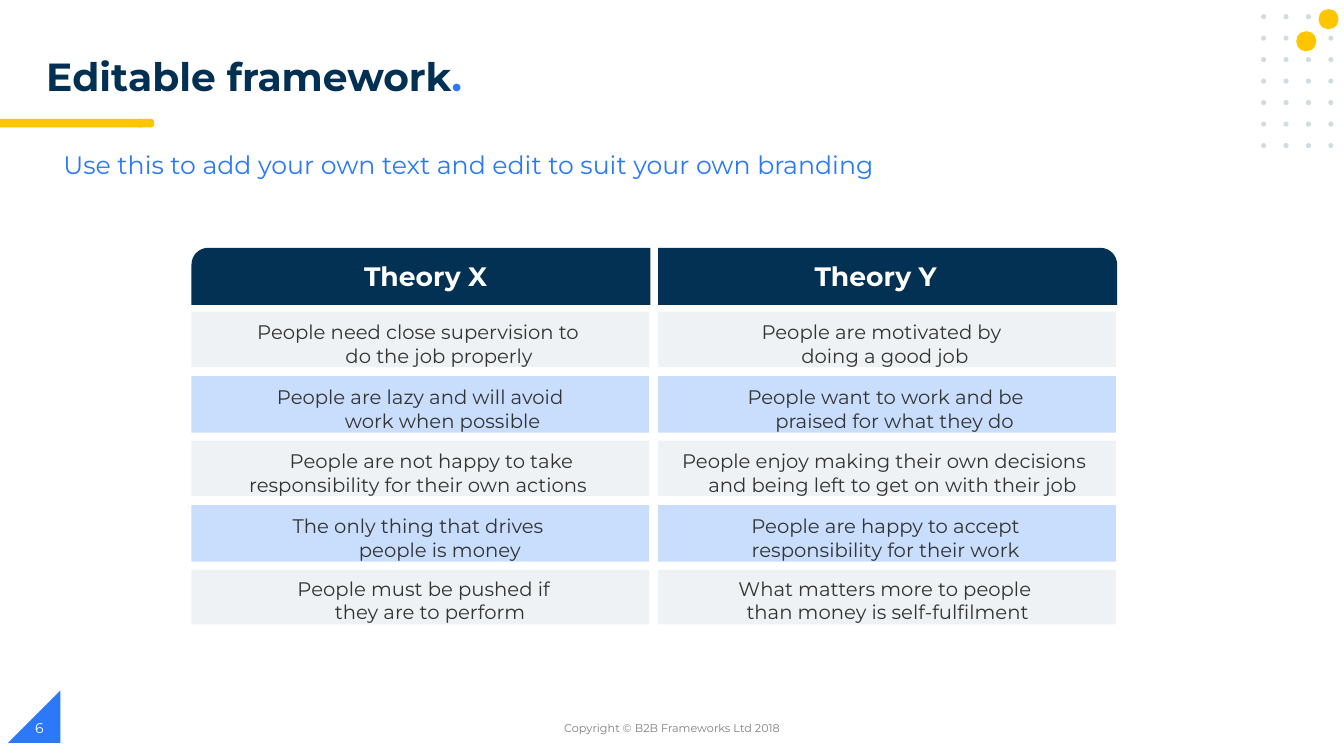
import math

from lxml import etree
from pptx import Presentation
from pptx.dml.color import RGBColor
from pptx.enum import shapes, text
from pptx.oxml.ns import qn
from pptx.util import Pt

COLORS = {
    "navy": "023053", "header": "023154", "blue": "2B79F8", "band": "2B7AF9",
    "yellow": "FFC600", "dot": "D1DBE0", "pale": "EEF2F4", "ink": "333333",
    "gray": "7F7F7F", "white": "FFFFFF",
}
FONT = "Montserrat"
SHAPE = shapes.MSO_SHAPE
CENTER = text.PP_ALIGN.CENTER
MIDDLE = text.MSO_ANCHOR.MIDDLE
BOX_INSETS = (7.2, 3.6, 7.2, 3.6)

# box (left, top, width, height), runs (text, size, color, bold), options
TEXTS = [
    ((25.9, 37.4, 406, 43.2),
     [("Editable framework", 28, "navy", True), (".", 28, "blue", True)],
     {"line_spacing": 0.9}),
    ((318.2, 505.4, 324, 28.8),
     [("Copyright © B2B Frameworks Ltd 2018", 8, "gray", False)],
     {"alignment": CENTER, "anchor": MIDDLE}),
    ((18, 505.4, 216, 28.8), [("6", 10, "white", False)], {"anchor": MIDDLE}),
    ((38.2, 103, 618.5, 34.6),
     [("Use this to add your own text and edit to suit your own branding",
       18, "blue", False)], {}),
]

# Each statement: text, (left margin, first-line indent, right margin)
THEORIES = [
    ("Theory X", 136.8, 259.2, [
        ("People need close supervision to do the job properly", (75, -30, 48)),
        ("People are lazy and will avoid work when possible", (82, -32, 50)),
        ("People are not happy to take responsibility for their own actions",
         (31, 19, 34)),
        ("The only thing that drives people is money", (92, -31, 64)),
        ("People must be pushed if they are to perform", (80, -9, 66)),
    ]),
    ("Theory Y", 470.2, 581, [
        ("People are motivated by doing a good job", (78, -5, 81)),
        ("People want to work and be praised for what they do", (66, -13, 55)),
        ("People enjoy making their own decisions and being left to get on "
         "with their job", (20, -12, 12)),
        ("People are happy to accept responsibility for their work", (56, 0, 58)),
        ("What matters more to people than money is self-fulﬁlment",
         (51, -4, 50)),
    ]),
]
HEADER_TOP, HEADER_WIDTH, HEADER_HEIGHT, CORNER = 177, 327.8, 40.8, 12
ROW_TOP, ROW_PITCH, ROW_WIDTH = 222.6, 46.1, 326.9
ROW_INSETS = [6, 6.5, 6, 6.5, 5]
ROW_HEIGHTS = [39.6, 40.3, 39.6, 40.3, 39]

DOT_LEFT, DOT_TOP, DOT_SIZE = 900.8, 10.1, 3.6
DOT_COLUMNS, DOT_ROWS, DOT_PITCH_X, DOT_PITCH_Y = 4, 7, 16, 15.35
SPOTS = [(941.8, 6.5), (925.9, 22.3)]
SPOT_SIZE = 14.4
UNDERLINE_TOPS = [85, 86.4]


def paint(shape, color, opacity=100):
    shape.shadow.inherit = False
    shape.line.fill.background()
    shape.fill.solid()
    shape.fill.fore_color.rgb = RGBColor.from_string(COLORS[color])
    if opacity < 100:
        rgb = shape.fill._xPr.find(".//" + qn("a:srgbClr"))
        etree.SubElement(rgb, qn("a:alpha")).set("val", str(opacity * 1000))


def add_figure(slide, preset, box, color, opacity=100):
    shape = slide.shapes.add_shape(preset, *map(Pt, box))
    paint(shape, color, opacity)
    return shape


def write(shape, runs, insets=BOX_INSETS, anchor=text.MSO_ANCHOR.TOP,
          indents=None, **paragraph_format):
    """Fill the shape with one paragraph made of the given runs."""
    frame = shape.text_frame
    sides = ("margin_left", "margin_top", "margin_right", "margin_bottom")
    frame_format = dict(zip(sides, map(Pt, insets)),
                        word_wrap=True, vertical_anchor=anchor)
    for name, value in frame_format.items():
        setattr(frame, name, value)
    paragraph = frame.paragraphs[0]
    for name, value in paragraph_format.items():
        setattr(paragraph, name, value)
    if indents:
        properties = paragraph._p.get_or_add_pPr()
        for name, value in zip(("marL", "indent", "marR"), indents):
            properties.set(name, str(Pt(value)))
    for words, size, color, bold in runs:
        run = paragraph.add_run()
        run.text = words
        run_format = {"name": FONT, "size": Pt(size), "bold": bold}
        for name, value in run_format.items():
            setattr(run.font, name, value)
        run.font.color.rgb = RGBColor.from_string(COLORS[color])


def add_label(slide, box, runs, **options):
    write(slide.shapes.add_textbox(*map(Pt, box)), runs, **options)


def add_header(slide, left, mirrored):
    """Draw a bar whose outer top corner is round: left, or right if mirrored."""
    points = [(HEADER_WIDTH, HEADER_HEIGHT), (HEADER_WIDTH, 0)]
    for step in range(9):
        angle = math.pi / 2 * step / 8
        points.append((CORNER * (1 - math.sin(angle)),
                       CORNER * (1 - math.cos(angle))))
    points.append((0, HEADER_HEIGHT))
    outline = [(Pt(left + (HEADER_WIDTH - x if mirrored else x)),
                Pt(HEADER_TOP + y)) for x, y in points]
    builder = slide.shapes.build_freeform(*outline[0])
    builder.add_line_segments(outline[1:], close=True)
    paint(builder.convert_to_shape(), "header")


def add_decoration(slide):
    triangle = add_figure(slide, SHAPE.RIGHT_TRIANGLE,
                          (5.8, 493.2, 37.4, 37.4), "blue")
    triangle._element.spPr.xfrm.set("flipH", "1")
    for top in UNDERLINE_TOPS:
        add_figure(slide, SHAPE.FLOWCHART_TERMINATOR,
                   (96.5, top, 13.7, 4.6), "yellow")
        add_figure(slide, SHAPE.RECTANGLE, (0, top, 101.5, 4.6), "yellow")
    for row in range(DOT_ROWS):
        for column in range(DOT_COLUMNS):
            add_figure(slide, SHAPE.OVAL,
                       (DOT_LEFT + column * DOT_PITCH_X,
                        DOT_TOP + row * DOT_PITCH_Y, DOT_SIZE, DOT_SIZE), "dot")
    for left, top in SPOTS:
        add_figure(slide, SHAPE.OVAL, (left, top, SPOT_SIZE, SPOT_SIZE), "yellow")


def add_theory(slide, name, left, name_left, statements, mirrored):
    add_header(slide, left, mirrored)
    add_label(slide, (name_left, 185, 96.5, 23.8), [(name, 19, "white", True)],
              insets=(0, 0.9, 0, 0), indents=(0.9, 0, 0))
    for row, (statement, indents) in enumerate(statements):
        color, opacity = ("band", 25) if row % 2 else ("pale", 100)
        box = (left, ROW_TOP + row * ROW_PITCH, ROW_WIDTH, ROW_HEIGHTS[row])
        cell = add_figure(slide, SHAPE.RECTANGLE, box, color, opacity)
        write(cell, [(statement, 14, "ink", False)],
              insets=(0, ROW_INSETS[row], 0, 0), indents=indents,
              alignment=CENTER)


def main():
    presentation = Presentation()
    presentation.slide_width, presentation.slide_height = Pt(960), Pt(540)
    slide = presentation.slides.add_slide(presentation.slide_layouts[6])
    add_decoration(slide)
    for box, runs, options in TEXTS:
        add_label(slide, box, runs, **options)
    for index, theory in enumerate(THEORIES):
        add_theory(slide, *theory, mirrored=index == 1)
    presentation.save("out.pptx")


if __name__ == "__main__":
    main()
